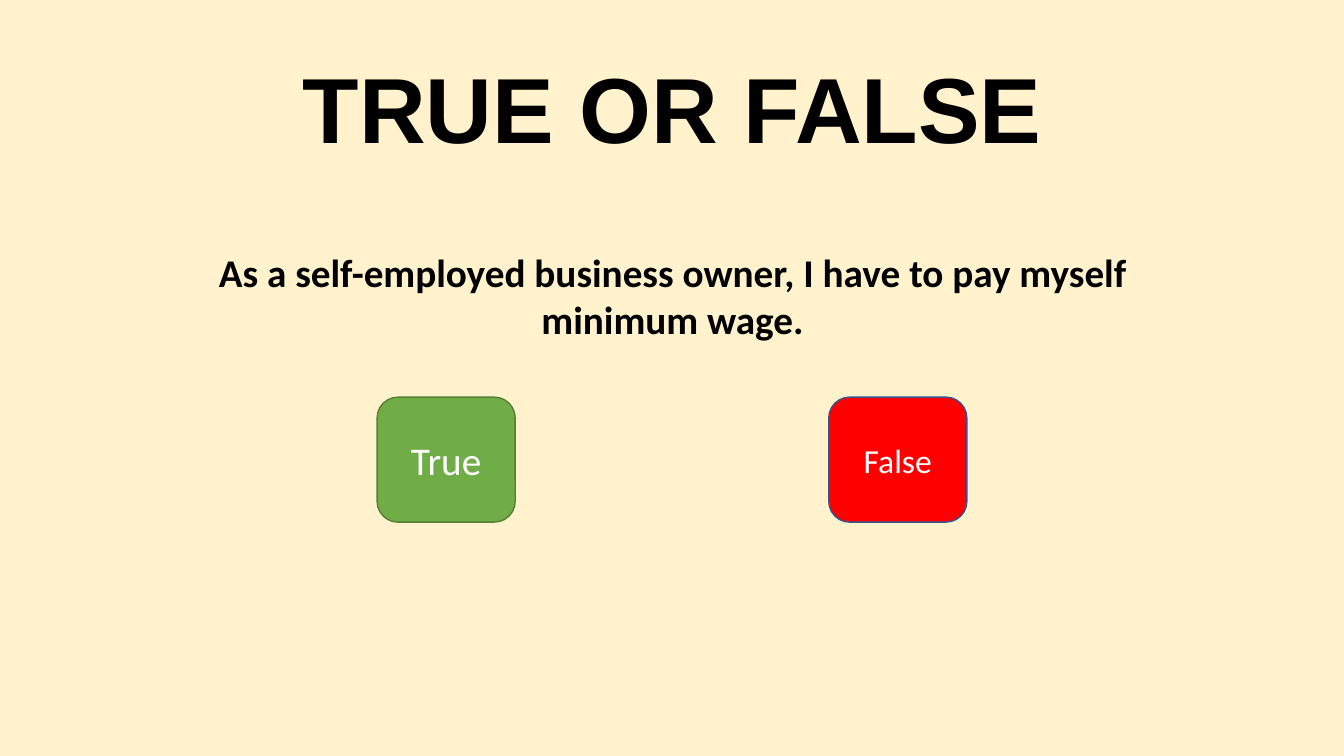
from dataclasses import dataclass
from pptx import Presentation
from pptx.dml.color import RGBColor
from pptx.enum.shapes import MSO_SHAPE
from pptx.enum.text import MSO_ANCHOR, PP_ALIGN
from pptx.util import Inches, Pt


@dataclass(frozen=True)
class Theme:
    cream: str = "FFF2CC"
    black: str = "000000"
    white: str = "FFFFFF"
    green: str = "70AD47"
    moss: str = "538035"
    red: str = "FF0000"
    blue: str = "325491"
    head: int = 66
    body: int = 28
    small: int = 24


theme = Theme()


def write(shape, text, size, color, font="Calibri", bold=False,
          anchor=MSO_ANCHOR.MIDDLE, spacing=None):
    frame = shape.text_frame
    frame.word_wrap = True
    frame.vertical_anchor = anchor
    para = frame.paragraphs[0]
    para.alignment = PP_ALIGN.CENTER
    if spacing:
        para.line_spacing = spacing
    run = para.add_run()
    run.text = text
    run.font.name = font
    run.font.size = Pt(size)
    run.font.bold = bold
    run.font.color.rgb = RGBColor.from_string(color)


# Slide and background
deck = Presentation()
deck.slide_width, deck.slide_height = Inches(13.33), Inches(7.5)
slide = deck.slides.add_slide(deck.slide_layouts[6])
back = slide.background.fill
back.solid()
back.fore_color.rgb = RGBColor.from_string(theme.cream)

# Title
title = slide.shapes.add_textbox(Inches(0.92), Inches(0.4), Inches(11.5), Inches(1.45))
write(title, "TRUE OR FALSE", theme.head, theme.black, font="Arial", bold=True, spacing=0.9)

# Statement
claim = slide.shapes.add_textbox(Inches(1.6), Inches(2.41), Inches(10.14), Inches(1.04))
write(claim, "As a self-employed business owner, I have to pay myself minimum wage.",
      theme.body, theme.black, bold=True, anchor=MSO_ANCHOR.TOP)

# Answer buttons
answers = [
    ("False", 8.22, theme.red, theme.blue, theme.small),
    ("True", 3.74, theme.green, theme.moss, theme.body),
]
for label, left, fill, edge, size in answers:
    button = slide.shapes.add_shape(MSO_SHAPE.ROUNDED_RECTANGLE, Inches(left),
                                    Inches(3.94), Inches(1.37), Inches(1.24))
    button.shadow.inherit = False
    button.fill.solid()
    button.fill.fore_color.rgb = RGBColor.from_string(fill)
    button.line.color.rgb = RGBColor.from_string(edge)
    button.line.width = Pt(1)
    write(button, label, size, theme.white)

deck.save("out.pptx")
